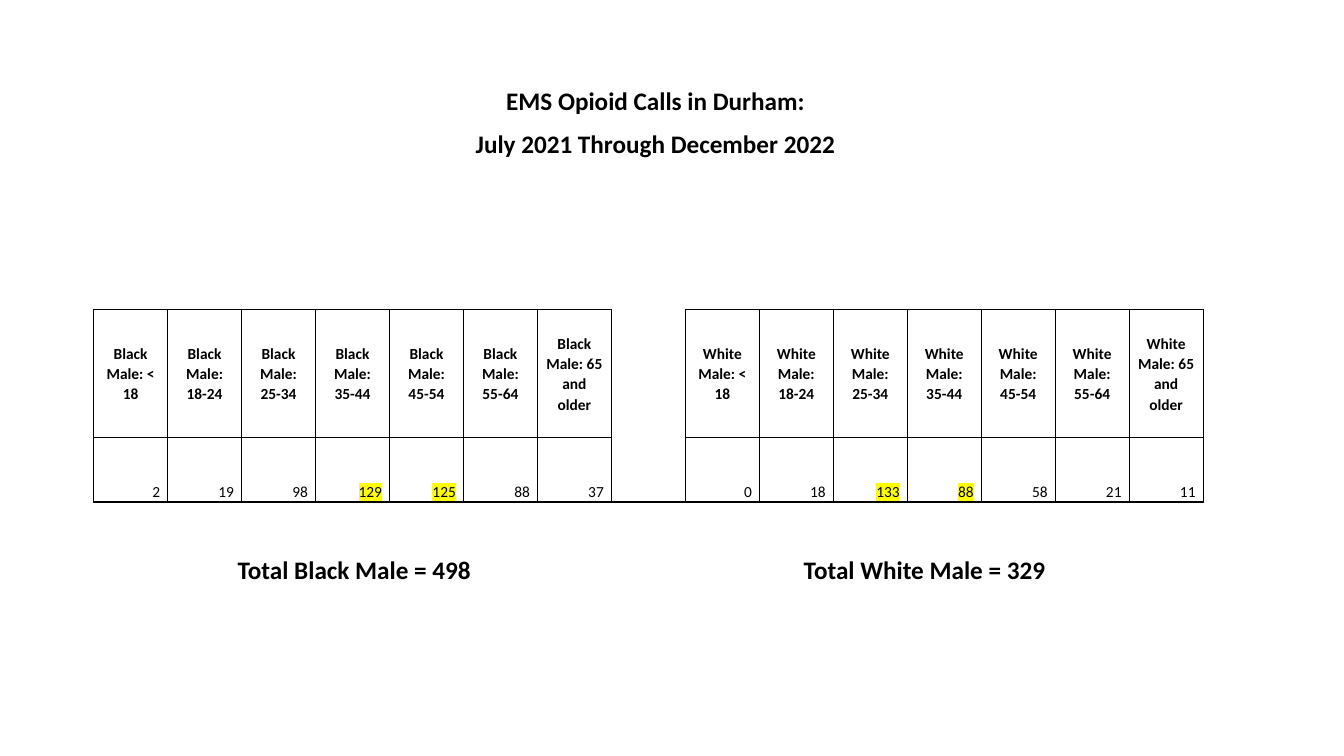
from lxml.etree import SubElement
from pptx import Presentation
from pptx.dml.color import RGBColor
from pptx.enum.text import MSO_ANCHOR as Anchor, MSO_AUTO_SIZE as AutoSize, PP_ALIGN as Align
from pptx.oxml.ns import qn
from pptx.util import Cm, Pt

BLACK = "000000"
YELLOW = "FFFF00"
AGES = ["< 18", "18-24", "25-34", "35-44", "45-54", "55-64", "65 and older"]
GROUPS = [
    ("Black", [2, 19, 98, 129, 125, 88, 37], {129, 125}),
    ("White", [0, 18, 133, 88, 58, 21, 11], {133, 88}),
]
GAP_COLUMN = len(AGES)
COLUMN_COUNT = 2 * len(AGES) + 1
ROW_HEIGHTS = [3.23, 0.81, 0.81]
ROW_SIDES = ["LRTB", "LRT", "LRB"]
GAP_SIDES = ["LR", "LR", "LRB"]


def color(hex_string):
    return RGBColor.from_string(hex_string)


def write(paragraph, text, size=11, bold=False, align=Align.CENTER, after=0, highlight=None):
    paragraph.alignment = align
    paragraph.line_spacing = 1.07
    paragraph.space_after = Pt(after)
    run = paragraph.add_run()
    run.text = text
    run.font.size = Pt(size)
    run.font.bold = bold
    run.font.color.rgb = color(BLACK)
    if highlight:
        mark = SubElement(run.font._element, qn("a:highlight"))
        SubElement(mark, qn("a:srgbClr"), val=highlight)
    run.font.name = "Calibri"


def add_heading(slide, left, top, height, lines):
    shape = slide.shapes.add_textbox(Cm(left), Cm(top), Cm(16.94), Cm(height))
    frame = shape.text_frame
    frame.word_wrap = True
    frame.auto_size = AutoSize.SHAPE_TO_FIT_TEXT
    for index, line in enumerate(lines):
        paragraph = frame.add_paragraph() if index else frame.paragraphs[0]
        write(paragraph, line, size=18, bold=True, after=8)


def set_borders(cell, sides):
    properties = cell._tc.get_or_add_tcPr()
    for side in "LRTB":
        line = SubElement(properties, qn(f"a:ln{side}"), w=str(Pt(1)))
        if side in sides:
            fill = SubElement(line, qn("a:solidFill"))
            SubElement(fill, qn("a:srgbClr"), val=BLACK)
        else:
            SubElement(line, qn("a:noFill"))


def format_cell(cell, sides, anchor):
    cell.margin_left = cell.margin_right = Cm(0.19)
    cell.margin_top = cell.margin_bottom = 0
    cell.vertical_anchor = anchor
    set_borders(cell, sides)
    cell.fill.background()


def add_calls_table(slide):
    height = Cm(sum(ROW_HEIGHTS))
    table = slide.shapes.add_table(
        len(ROW_HEIGHTS), COLUMN_COUNT, Cm(2.36), Cm(7.8), Cm(27.97), height
    ).table
    table.first_row = table.horz_banding = False
    for row, row_height in enumerate(ROW_HEIGHTS):
        table.rows[row].height = Cm(row_height)
        for column in range(COLUMN_COUNT):
            sides = GAP_SIDES[row] if column == GAP_COLUMN else ROW_SIDES[row]
            anchor = Anchor.BOTTOM if row else Anchor.MIDDLE
            format_cell(table.cell(row, column), sides, anchor)
    for group, (name, counts, peaks) in enumerate(GROUPS):
        first_column = group * (GAP_COLUMN + 1)
        for column, (age, count) in enumerate(zip(AGES, counts), first_column):
            header = table.cell(0, column).text_frame.paragraphs[0]
            write(header, f"{name} Male: {age}", bold=True)
            value = table.cell(2, column).text_frame.paragraphs[0]
            write(value, str(count), align=Align.RIGHT,
                  highlight=YELLOW if count in peaks else None)


def main():
    presentation = Presentation()
    presentation.slide_width = Cm(33.87)
    presentation.slide_height = Cm(19.05)
    slide = presentation.slides.add_slide(presentation.slide_layouts[6])
    add_heading(slide, 8.05, 1.96, 2.16,
                ["EMS Opioid Calls in Durham:", "July 2021 Through December 2022"])
    add_calls_table(slide)
    for left, (name, counts, _) in zip([0.46, 14.83], GROUPS):
        add_heading(slide, left, 13.79, 1.04, [f"Total {name} Male = {sum(counts)}"])
    presentation.save("out.pptx")


if __name__ == "__main__":
    main()
